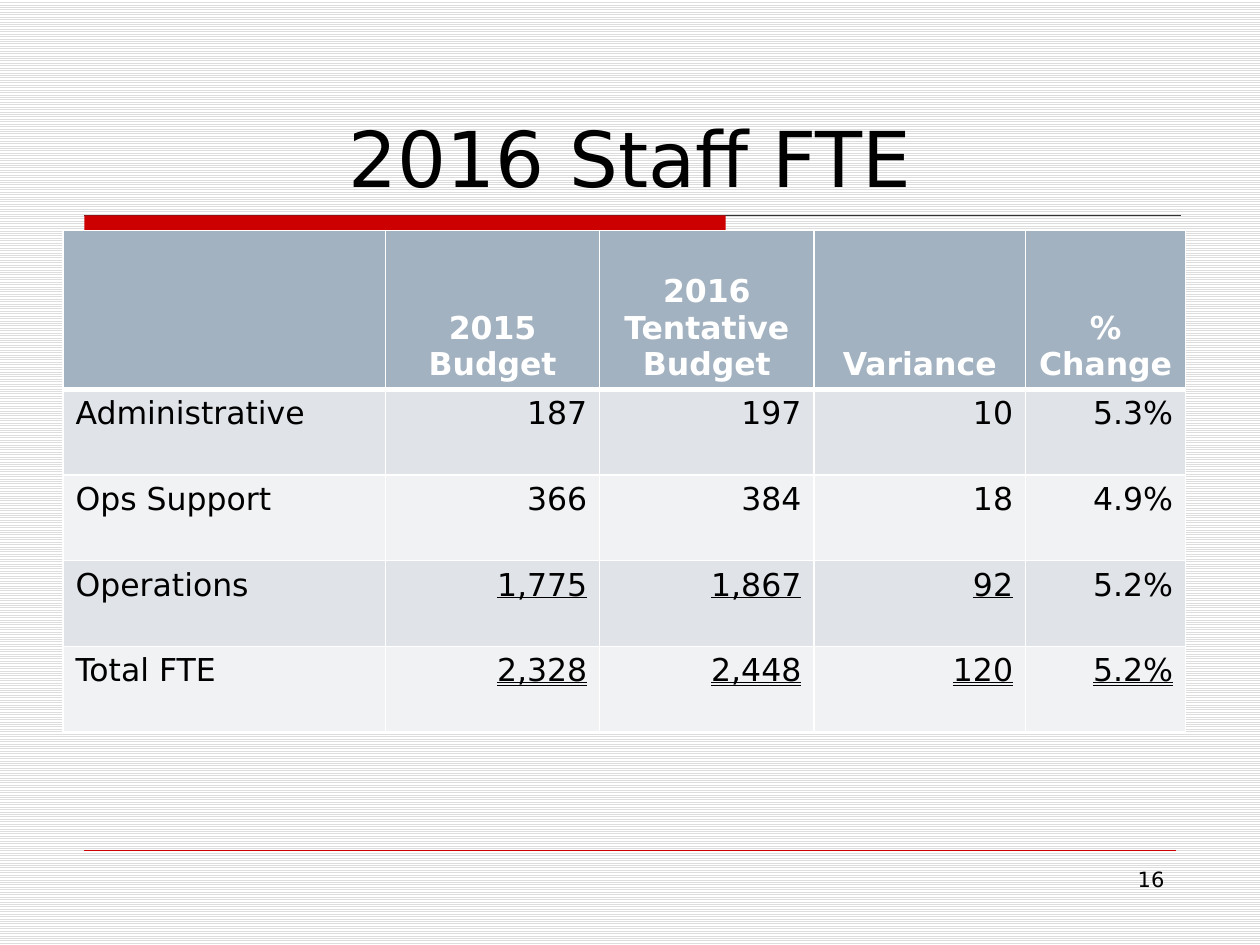
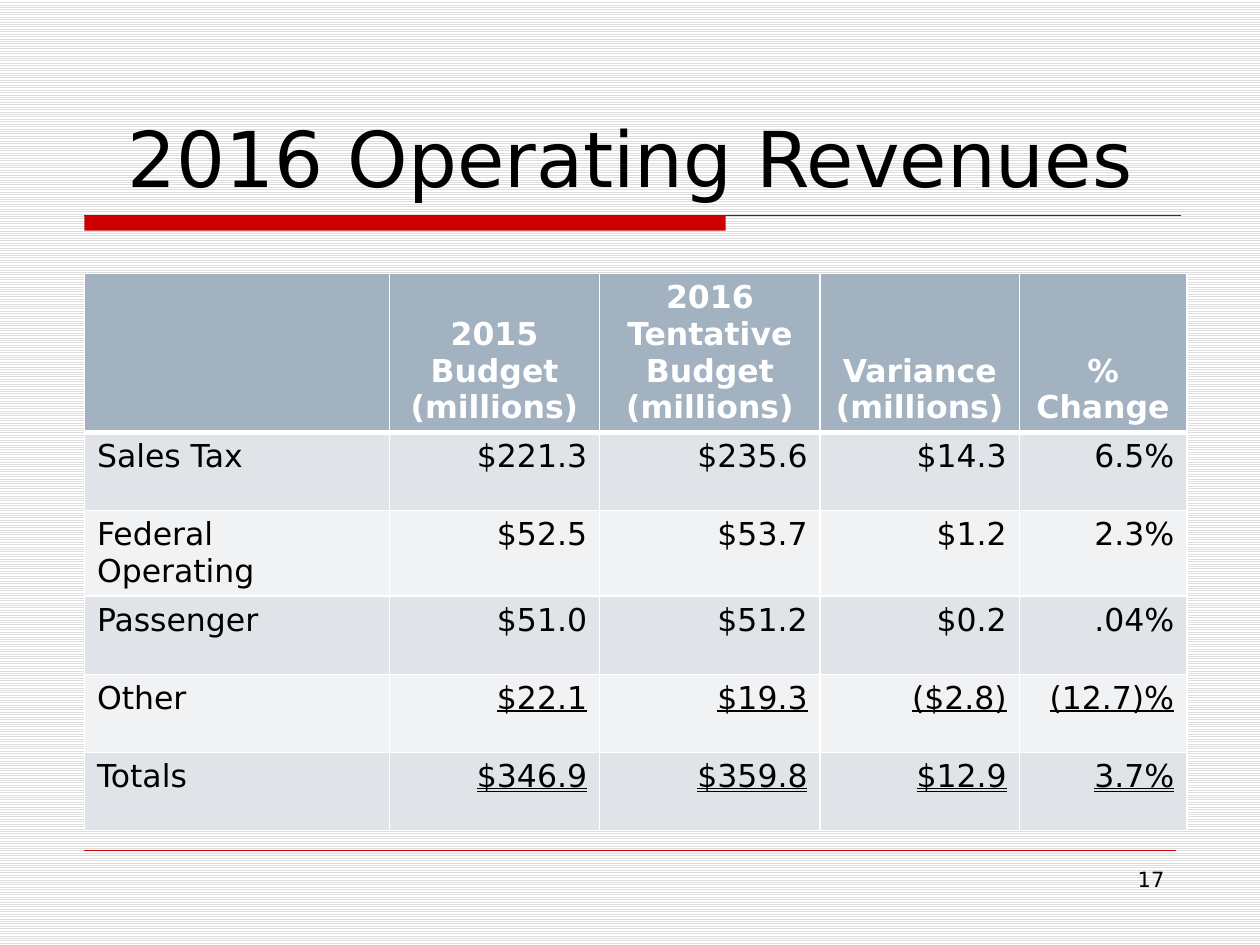
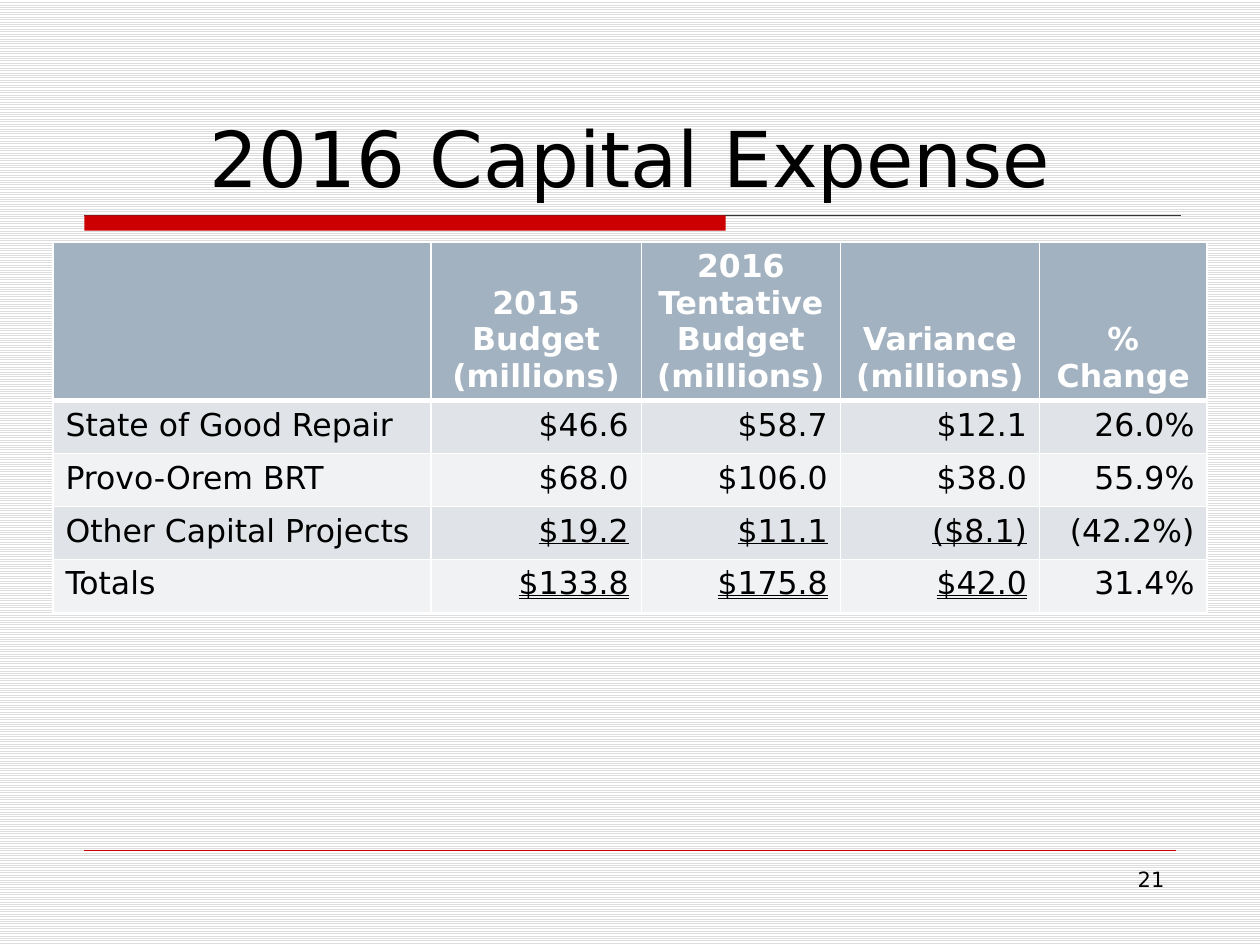
from dataclasses import dataclass

from lxml import etree
from pptx import Presentation
from pptx.dml.color import RGBColor
from pptx.enum.dml import MSO_PATTERN
from pptx.enum.shapes import MSO_CONNECTOR, MSO_SHAPE
from pptx.enum.text import MSO_ANCHOR, MSO_AUTO_SIZE, MSO_UNDERLINE, PP_ALIGN
from pptx.oxml.ns import qn
from pptx.util import Inches, Pt

LEFT, CENTER, RIGHT = PP_ALIGN.LEFT, PP_ALIGN.CENTER, PP_ALIGN.RIGHT
TOP, BOTTOM = MSO_ANCHOR.TOP, MSO_ANCHOR.BOTTOM
SINGLE, DOUBLE = MSO_UNDERLINE.SINGLE_LINE, MSO_UNDERLINE.DOUBLE_LINE
TITLE_ONLY = 5


@dataclass(frozen=True)
class Theme:
    font: str = "DejaVu Sans"
    text: RGBColor = RGBColor.from_string("000000")
    white: RGBColor = RGBColor.from_string("FFFFFF")
    stripe: RGBColor = RGBColor.from_string("DDDDDD")
    red: RGBColor = RGBColor.from_string("CC0000")
    rule: RGBColor = RGBColor.from_string("333333")
    header: RGBColor = RGBColor.from_string("A3B2C1")
    odd_row: RGBColor = RGBColor.from_string("E0E4E9")
    even_row: RGBColor = RGBColor.from_string("F0F2F4")
    title_size: int = 44
    table_size: int = 18
    number_size: int = 12


theme = Theme()

# Slide contents; underlined = columns underlined in the last two rows
slides = [
    dict(
        title="2016 Staff FTE", number="16", at=(0.5, 1.83),
        cols=(2.56, 1.7, 1.7, 1.68, 1.27), header_height=1.26, row_height=0.68,
        underlined=(3, 4),
        rows=[
            ("", "2015 Budget", "2016 Tentative Budget", "Variance", "% Change"),
            ("Administrative", "187", "197", "10", "5.3%"),
            ("Ops Support", "366", "384", "18", "4.9%"),
            ("Operations", "1,775", "1,867", "92", "5.2%"),
            ("Total FTE", "2,328", "2,448", "120", "5.2%"),
        ],
    ),
    dict(
        title="2016 Operating Revenues", number="17", at=(0.67, 2.17),
        cols=(2.42, 1.67, 1.75, 1.58, 1.33), header_height=1.25, row_height=0.62,
        underlined=(4, 4),
        rows=[
            ("", "2015 Budget\n(millions)", "2016 Tentative Budget\n(millions)",
             "Variance\n(millions)", "% Change"),
            ("Sales Tax", "$221.3", "$235.6", "$14.3", "6.5%"),
            ("Federal Operating", "$52.5", "$53.7", "$1.2", "2.3%"),
            ("Passenger", "$51.0", "$51.2", "$0.2", ".04%"),
            ("Other", "$22.1", "$19.3", "($2.8)", "(12.7)%"),
            ("Totals", "$346.9", "$359.8", "$12.9", "3.7%"),
        ],
    ),
    dict(
        title="2016 Capital Expense", number="21", at=(0.42, 1.92),
        cols=(3, 1.67, 1.58, 1.58, 1.33), header_height=1.25, row_height=0.42,
        underlined=(3, 3),
        rows=[
            ("", "2015 Budget (millions)", "2016 Tentative Budget (millions)",
             "Variance\n(millions)", "% Change"),
            ("State of Good Repair", "$46.6", "$58.7", "$12.1", "26.0%"),
            ("Provo-Orem BRT", "$68.0", "$106.0", "$38.0", "55.9%"),
            ("Other Capital Projects", "$19.2", "$11.1", "($8.1)", "(42.2%)"),
            ("Totals", "$133.8", "$175.8", "$42.0", "31.4%"),
        ],
    ),
]


def write(tf, text, size, color, align, bold=False, underline=None):
    for i, line in enumerate(text.split("\n")):
        p = tf.add_paragraph() if i else tf.paragraphs[0]
        p.alignment = align
        p.font.size = Pt(size)
        if line:
            r = p.add_run()
            r.text = line
            r.font.name = theme.font
            r.font.size = Pt(size)
            r.font.bold = bold
            r.font.underline = underline
            r.font.color.rgb = color


def add_rule(s, x1, x2, y, color, width):
    line = s.shapes.add_connector(
        MSO_CONNECTOR.STRAIGHT, Inches(x1), Inches(y), Inches(x2), Inches(y))
    line.line.color.rgb = color
    line.line.width = Pt(width)
    etree.SubElement(line._element.spPr, qn("a:effectLst"))


prs = Presentation()
prs.slide_width, prs.slide_height = Inches(10), Inches(7.5)

# Striped background
fill = prs.slide_master.background.fill
fill.patterned()
fill.pattern = MSO_PATTERN.LIGHT_HORIZONTAL
fill.fore_color.rgb = theme.stripe
fill.back_color.rgb = theme.white

for data in slides:
    s = prs.slides.add_slide(prs.slide_layouts[TITLE_ONLY])

    # Red band and rules
    add_rule(s, 0.67, 9.37, 1.71, theme.rule, 0.75)
    band = s.shapes.add_shape(
        MSO_SHAPE.RECTANGLE, Inches(0.67), Inches(1.71), Inches(5.09), Inches(0.12))
    band.shadow.inherit = False
    band.fill.solid()
    band.fill.fore_color.rgb = theme.red
    band.line.fill.background()
    add_rule(s, 0.67, 9.33, 6.75, theme.red, 0.25)

    # Title
    title = s.shapes.title
    title.left, title.top = Inches(0.63), Inches(0.33)
    title.width, title.height = Inches(8.75), Inches(1.33)
    tf = title.text_frame
    tf.auto_size = MSO_AUTO_SIZE.NONE
    tf.vertical_anchor = BOTTOM
    write(tf, data["title"], theme.title_size, theme.text, CENTER)

    # Table
    rows, cols = data["rows"], data["cols"]
    heights = [data["header_height"]] + [data["row_height"]] * (len(rows) - 1)
    left, top = data["at"]
    table = s.shapes.add_table(
        len(rows), len(cols), Inches(left), Inches(top),
        Inches(sum(cols)), Inches(sum(heights))).table
    for col, width in zip(table.columns, cols):
        col.width = Inches(width)
    for row, height in zip(table.rows, heights):
        row.height = Inches(height)

    underlines = {
        len(rows) - 2: (SINGLE, data["underlined"][0]),
        len(rows) - 1: (DOUBLE, data["underlined"][1]),
    }
    for i, values in enumerate(rows):
        is_header = i == 0
        style, last_col = underlines.get(i, (None, 0))
        for j, text in enumerate(values):
            cell = table.cell(i, j)
            cell.vertical_anchor = BOTTOM if is_header else TOP

            # White borders, thicker under the header
            for side in "LRTB":
                thick = (i, side) in ((0, "B"), (1, "T"))
                ln = etree.SubElement(cell._tc.get_or_add_tcPr(), qn("a:ln" + side))
                ln.set("w", str(Pt(3 if thick else 1)))
                solid = etree.SubElement(ln, qn("a:solidFill"))
                etree.SubElement(solid, qn("a:srgbClr")).set("val", str(theme.white))

            cell.fill.solid()
            cell.fill.fore_color.rgb = (
                theme.header if is_header else theme.odd_row if i % 2 else theme.even_row)
            write(
                cell.text_frame, text, theme.table_size,
                theme.white if is_header else theme.text,
                CENTER if is_header else RIGHT if j else LEFT,
                bold=is_header, underline=style if 1 <= j <= last_col else None)

    # Slide number
    box = s.shapes.add_textbox(Inches(7.17), Inches(6.83), Inches(2.17), Inches(0.52))
    box.text_frame.word_wrap = True
    write(box.text_frame, data["number"], theme.number_size, theme.text, RIGHT)

prs.save("out.pptx")
